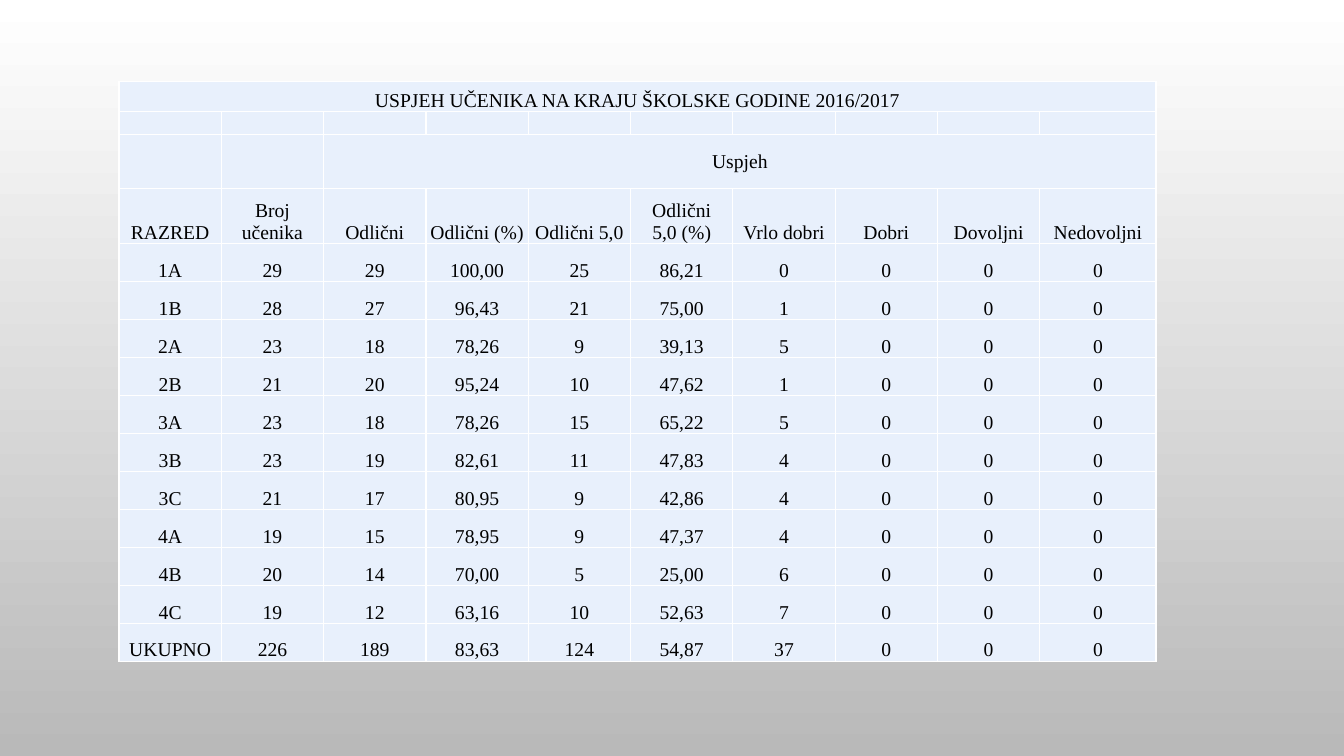
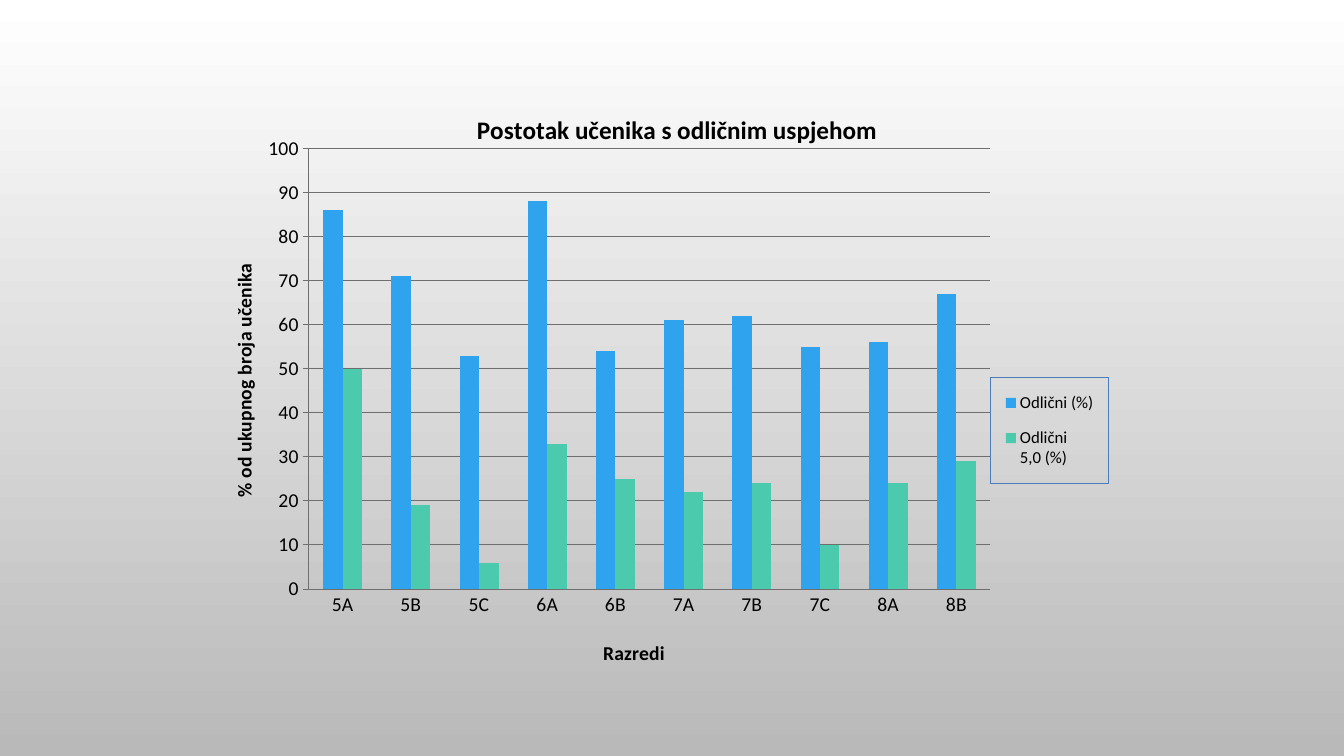
from lxml.etree import SubElement
from pptx import Presentation
from pptx.chart.data import CategoryChartData
from pptx.dml.color import RGBColor
from pptx.enum.chart import XL_CHART_TYPE, XL_LEGEND_POSITION, XL_TICK_MARK
from pptx.enum.text import MSO_ANCHOR, PP_ALIGN
from pptx.oxml import parse_xml
from pptx.oxml.ns import nsdecls, qn
from pptx.util import Pt

WHITE = RGBColor(0xFF, 0xFF, 0xFF)
BLACK = RGBColor(0x00, 0x00, 0x00)
BACKGROUND_GREY = RGBColor(0xB9, 0xB9, 0xB9)
CELL_BLUE = RGBColor(0xE8, 0xF0, 0xFC)
GRID_GREY = RGBColor(0x6F, 0x6F, 0x6F)
LEGEND_BLUE = RGBColor(0x4A, 0x7E, 0xBB)
SERIES_BLUE = RGBColor(0x2F, 0xA3, 0xEE)
SERIES_GREEN = RGBColor(0x4B, 0xCA, 0xAD)
TABLE_FONT = "Times New Roman"
CHART_FONT = "Calibri"

TABLE_BOX = (85, 58.2, 741, 414)
CHART_BOX = (155.5, 60, 649.5, 420)

HEADINGS = ["RAZRED", "Broj učenika", "Odlični", "Odlični (%)", "Odlični 5,0",
            "Odlični\v5,0 (%)", "Vrlo dobri", "Dobri", "Dovoljni", "Nedovoljni"]
RESULTS = [
    ["1A", "29", "29", "100,00", "25", "86,21", "0", "0", "0", "0"],
    ["1B", "28", "27", "96,43", "21", "75,00", "1", "0", "0", "0"],
    ["2A", "23", "18", "78,26", "9", "39,13", "5", "0", "0", "0"],
    ["2B", "21", "20", "95,24", "10", "47,62", "1", "0", "0", "0"],
    ["3A", "23", "18", "78,26", "15", "65,22", "5", "0", "0", "0"],
    ["3B", "23", "19", "82,61", "11", "47,83", "4", "0", "0", "0"],
    ["3C", "21", "17", "80,95", "9", "42,86", "4", "0", "0", "0"],
    ["4A", "19", "15", "78,95", "9", "47,37", "4", "0", "0", "0"],
    ["4B", "20", "14", "70,00", "5", "25,00", "6", "0", "0", "0"],
    ["4C", "19", "12", "63,16", "10", "52,63", "7", "0", "0", "0"],
    ["UKUPNO", "226", "189", "83,63", "124", "54,87", "37", "0", "0", "0"],
]
TABLE_ROWS = [
    ["USPJEH UČENIKA NA KRAJU ŠKOLSKE GODINE 2016/2017"] + [""] * 9,
    [""] * 10,
    ["", "", "Uspjeh"] + [""] * 7,
    HEADINGS,
] + RESULTS
HEADER_HEIGHTS = [21.5, 14.5, 38.8, 39.2]
COLUMN_WIDTH = 73.1

CLASSES = ["5A", "5B", "5C", "6A", "6B", "7A", "7B", "7C", "8A", "8B"]
SERIES = [
    ("Odlični (%)", [86, 71, 53, 88, 54, 61, 62, 55, 56, 67], SERIES_BLUE),
    ("Odlični\n5,0 (%)", [50, 19, 6, 33, 25, 22, 24, 10, 24, 29], SERIES_GREEN),
]


def set_background(master):
    """Give every slide the white to grey gradient."""
    fill = master.background.fill
    fill.gradient()
    fill.gradient_angle = 270
    for stop, position, color in zip(fill.gradient_stops, (0, 1), (WHITE, BACKGROUND_GREY)):
        stop.position = position
        stop.color.rgb = color


def set_font(font, name, size, bold=False):
    """Format a font in black."""
    font.name = name
    font.size = Pt(size)
    font.bold = bold
    font.color.rgb = BLACK


def format_cell(cell, text):
    """Write and format one table cell."""
    cell.text = text
    cell.margin_left = cell.margin_right = cell.margin_top = Pt(0.75)
    cell.margin_bottom = 0
    cell.vertical_anchor = MSO_ANCHOR.MIDDLE if text == "Uspjeh" else MSO_ANCHOR.BOTTOM
    paragraph = cell.text_frame.paragraphs[0]
    paragraph.alignment = PP_ALIGN.CENTER
    set_font(paragraph.font, TABLE_FONT, 14)
    if not text:
        SubElement(paragraph._p, qn("a:endParaRPr"), sz="1400")
    properties = cell._tc.get_or_add_tcPr()
    for side in ("lnL", "lnR", "lnT", "lnB"):
        properties.append(parse_xml(
            f'<a:{side} {nsdecls("a")} w="12700"><a:solidFill>'
            f'<a:srgbClr val="{WHITE}"/></a:solidFill></a:{side}>'))
    cell.fill.solid()
    cell.fill.fore_color.rgb = CELL_BLUE


def add_results_table(slide, box):
    """Place the table of results in the box."""
    left, top, width, height = box
    row_count, column_count = len(TABLE_ROWS), len(HEADINGS)
    table = slide.shapes.add_table(
        row_count, column_count, Pt(left), Pt(top), Pt(width), Pt(height)).table
    table.first_row = table.horz_banding = False
    last_width = width - COLUMN_WIDTH * (column_count - 1)
    for column, column_width in zip(
            table.columns, [COLUMN_WIDTH] * (column_count - 1) + [last_width]):
        column.width = Pt(column_width)
    result_height = 27.15
    for row, row_height in zip(table.rows, HEADER_HEIGHTS + [result_height] * len(RESULTS)):
        row.height = Pt(row_height)
    for row, texts in zip(table.rows, TABLE_ROWS):
        for cell, text in zip(row.cells, texts):
            format_cell(cell, text)
    last_column = column_count - 1
    table.cell(0, 0).merge(table.cell(0, last_column))
    table.cell(2, 2).merge(table.cell(2, last_column))


def place_part(element, index, x, y, size=None, inner=False):
    """Set a chart part's manual layout as fractions of the chart."""
    for layout in element.findall(qn("c:layout")):
        element.remove(layout)
    values = [("layoutTarget", "inner")] if inner else []
    values += [("xMode", "edge"), ("yMode", "edge"), ("x", x), ("y", y)]
    if size:
        values += [("w", size[0]), ("h", size[1])]
    body = "".join(f'<c:{name} val="{value}"/>' for name, value in values)
    element.insert(index, parse_xml(
        f'<c:layout {nsdecls("c")}><c:manualLayout>{body}</c:manualLayout></c:layout>'))


def write_title(title, text, size, x, y):
    """Write a bold chart or axis title and place it."""
    title.text_frame.text = text
    set_font(title.text_frame.paragraphs[0].font, CHART_FONT, size, True)
    place_part(title._element, 1, x, y)


def format_axis(axis, title, x, y, tick):
    """Format an axis with its title."""
    write_title(axis.axis_title, title, 14, x, y)
    set_font(axis.tick_labels.font, CHART_FONT, 14)
    axis.major_tick_mark = tick
    axis.minor_tick_mark = XL_TICK_MARK.NONE
    axis.format.line.color.rgb = GRID_GREY
    axis.format.line.width = Pt(0.75)


def format_legend(chart):
    """Place the outlined legend on the right."""
    chart.has_legend = True
    legend = chart.legend
    legend.position = XL_LEGEND_POSITION.RIGHT
    legend.include_in_layout = False
    set_font(legend.font, CHART_FONT, 12)
    element = legend._element
    place_part(element, 1, 0.85, 0.5, (0.13, 0.18))
    element.find(qn("c:txPr")).addprevious(parse_xml(
        f'<c:spPr {nsdecls("c", "a")}><a:noFill/><a:ln w="9525"><a:solidFill>'
        f'<a:srgbClr val="{LEGEND_BLUE}"/></a:solidFill></a:ln></c:spPr>'))


def add_results_chart(slide, box):
    """Place the column chart of excellent pupils in the box."""
    data = CategoryChartData()
    data.categories = CLASSES
    for name, values, _ in SERIES:
        data.add_series(name, values)
    chart = slide.shapes.add_chart(
        XL_CHART_TYPE.COLUMN_CLUSTERED, *map(Pt, box), data).chart
    set_font(chart.font, CHART_FONT, 10)
    chart.has_title = True
    write_title(chart.chart_title, "Postotak učenika s odličnim uspjehom", 18, 0.28, 0.04)

    format_axis(chart.category_axis, "Razredi", 0.42, 0.94, XL_TICK_MARK.NONE)
    value_axis = chart.value_axis
    format_axis(value_axis, "% od ukupnog broja učenika", 0.01, 0.3, XL_TICK_MARK.OUTSIDE)
    value_axis.axis_title.text_frame._txBody.bodyPr.set("rot", "-5400000")
    value_axis.minimum_scale = 0
    value_axis.maximum_scale = 100
    value_axis.major_unit = 10
    value_axis.has_major_gridlines = True
    value_axis.major_gridlines.format.line.color.rgb = GRID_GREY
    value_axis.major_gridlines.format.line.width = Pt(0.75)

    plot = chart.plots[0]
    plot.gap_width = 150
    plot.overlap = 0
    plot.vary_by_categories = False
    for series, (_, _, color) in zip(plot.series, SERIES):
        series.format.fill.solid()
        series.format.fill.fore_color.rgb = color
    format_legend(chart)
    plot_area = chart._chartSpace.find(f'{qn("c:chart")}/{qn("c:plotArea")}')
    place_part(plot_area, 0, 0.1, 0.11, (0.75, 0.75), inner=True)


def main():
    """Build and save the presentation."""
    presentation = Presentation()
    presentation.slide_width = Pt(960)
    presentation.slide_height = Pt(540)
    set_background(presentation.slide_master)
    blank_layout = presentation.slide_layouts[6]
    add_results_table(presentation.slides.add_slide(blank_layout), TABLE_BOX)
    add_results_chart(presentation.slides.add_slide(blank_layout), CHART_BOX)
    presentation.save("out.pptx")


if __name__ == "__main__":
    main()
